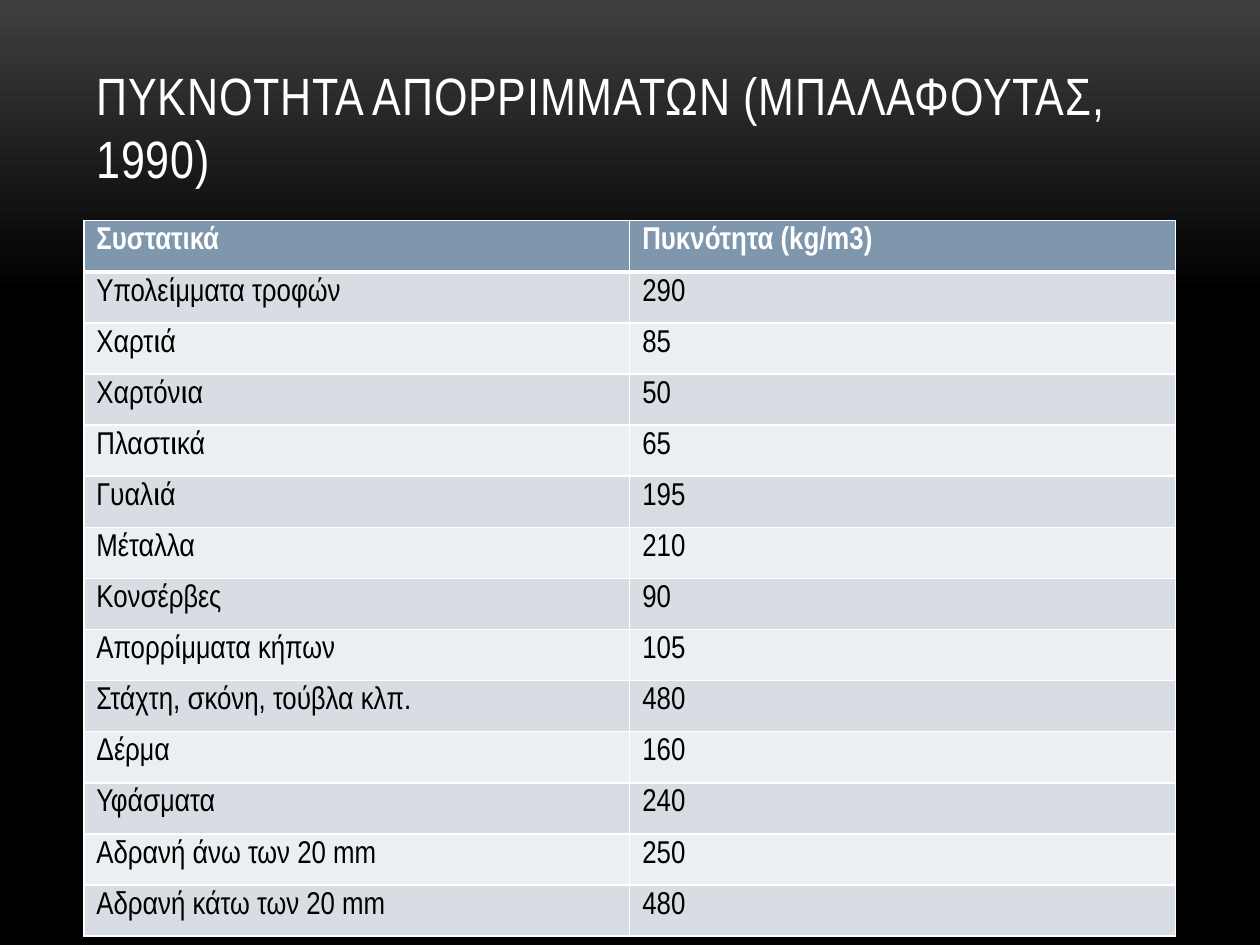
from copy import deepcopy
from dataclasses import dataclass

from lxml import etree
from pptx import Presentation
from pptx.dml.color import RGBColor
from pptx.enum import text
from pptx.oxml.ns import qn
from pptx.util import Cm, Pt


@dataclass(frozen=True)
class Theme:
    font: str = "Arial Narrow"
    title_size: int = 30
    table_size: int = 18
    light: str = "FFFFFF"
    dark: str = "000000"
    glow: str = "3F3F3F"
    header: str = "7E97AD"
    bands: tuple = ("D8DDE3", "ECEFF1")


TITLE = "ΠΥΚΝΟΤΗΤΑ ΑΠΟΡΡΙΜΜΑΤΩΝ (ΜΠΑΛΑΦΟΥΤΑΣ, 1990)"
DENSITIES = [
    ("Συστατικά", "Πυκνότητα (kg/m3)"),
    ("Υπολείμματα τροφών", "290"),
    ("Χαρτιά", "85"),
    ("Χαρτόνια", "50"),
    ("Πλαστικά", "65"),
    ("Γυαλιά", "195"),
    ("Μέταλλα", "210"),
    ("Κονσέρβες", "90"),
    ("Απορρίμματα κήπων", "105"),
    ("Στάχτη, σκόνη, τούβλα κλπ.", "480"),
    ("Δέρμα", "160"),
    ("Υφάσματα", "240"),
    ("Αδρανή άνω των 20 mm", "250"),
    ("Αδρανή κάτω των 20 mm", "480"),
]


def write(tf, words, *, font, size, color, bold=False, spacing=0):
    """Put words in the first paragraph; spacing is in points between letters."""
    p = tf.paragraphs[0]
    p.alignment = text.PP_ALIGN.LEFT
    r = p.add_run()
    r.text = words
    r.font.name, r.font.size, r.font.bold = font, Pt(size), bold
    r.font.color.rgb = RGBColor.from_string(color)
    if spacing:
        r.font._element.set("spc", str(round(spacing * 100)))


def add_border(cell, side, color, width):
    """Draw one cell edge; side is L, R, T or B, in that order and before the fill."""
    ln = etree.SubElement(cell._tc.get_or_add_tcPr(), qn(f"a:ln{side}"), w=str(Pt(width)))
    fill = etree.SubElement(ln, qn("a:solidFill"))
    etree.SubElement(fill, qn("a:srgbClr"), val=color)


class Deck:
    def __init__(self, theme):
        self.theme = theme
        self.prs = Presentation()
        self.prs.slide_width, self.prs.slide_height = Cm(25.4), Cm(19.05)
        self.s = None

    def add_slide(self):
        self.s = self.prs.slides.add_slide(self.prs.slide_layouts[5])
        fill = self.s.background.fill
        fill.gradient()
        fill.gradient_angle = 270
        stops = fill.gradient_stops
        for stop, position, color in zip(stops, (0, 0.31), (self.theme.glow, self.theme.dark)):
            stop.position = position
            stop.color.rgb = RGBColor.from_string(color)
        stop_list = self.s.element.find(".//" + qn("a:gsLst"))
        stop_list.append(deepcopy(stop_list[-1]))
        fill.gradient_stops[2].position = 1

    def title(self, words, left, top, width, height):
        sp = self.s.shapes.title
        sp.left, sp.top, sp.width, sp.height = left, top, width, height
        tf = sp.text_frame
        tf.word_wrap = True
        tf.auto_size = text.MSO_AUTO_SIZE.NONE
        tf.vertical_anchor = text.MSO_ANCHOR.BOTTOM
        write(tf, words, font=self.theme.font, size=self.theme.title_size,
              color=self.theme.light, spacing=0.5)

    def table(self, rows, left, top, width, height):
        th = self.theme
        tbl = self.s.shapes.add_table(len(rows), len(rows[0]), left, top, width, height).table
        for i, row in enumerate(rows):
            head = i == 0
            fill = th.header if head else th.bands[(i - 1) % 2]
            edges = {"L": 1, "R": 1, "T": 3 if i == 1 else 1, "B": 3 if head else 1}
            for j, words in enumerate(row):
                cell = tbl.cell(i, j)
                for side, line_width in edges.items():
                    add_border(cell, side, th.light, line_width)
                cell.fill.solid()
                cell.fill.fore_color.rgb = RGBColor.from_string(fill)
                write(cell.text_frame, words, font=th.font, size=th.table_size,
                      color=th.light if head else th.dark, bold=head)


def main():
    deck = Deck(Theme())
    deck.add_slide()
    left, width = Cm(1.69), Cm(22.01)
    deck.title(TITLE, left, Cm(0.76), width, Cm(3.18))
    deck.table(DENSITIES, left, Cm(4.45), width, Cm(14.43))
    deck.prs.save("out.pptx")


if __name__ == "__main__":
    main()
